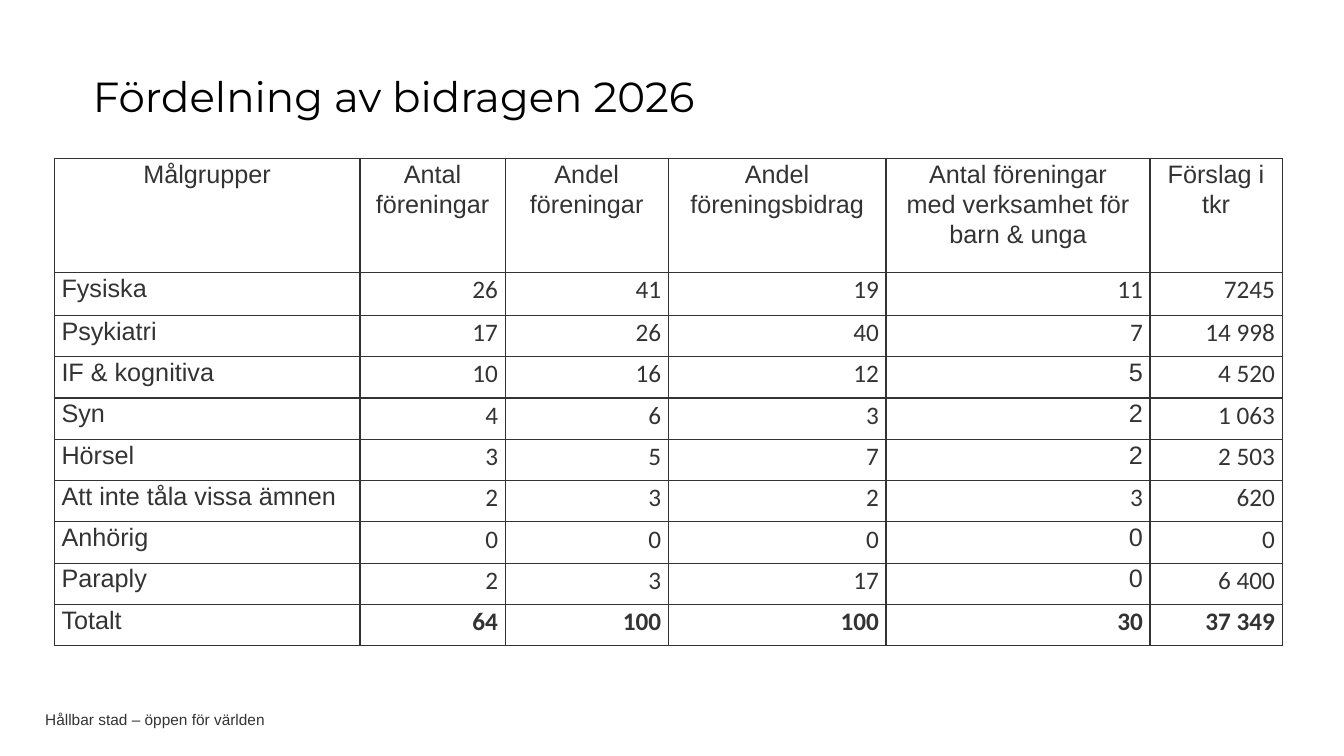
from dataclasses import dataclass

from lxml.etree import SubElement
from pptx import Presentation
from pptx.dml.color import RGBColor
from pptx.enum.text import MSO_ANCHOR as Anchor, PP_ALIGN as Align
from pptx.oxml.ns import qn
from pptx.slide import Slide
from pptx.table import _Cell as Cell
from pptx.text.text import _Paragraph as Paragraph
from pptx.util import Cm, Pt

COLORS = {"title": "000000", "text": "333333", "border": "333333"}
BODY_FONT, NUMBER_FONT, TITLE_FONT = "Arial", "Calibri", "Montserrat"


@dataclass
class Label:
    text: str
    left: float
    top: float
    width: float
    height: float
    size: int
    font: str
    color: str
    line_spacing: float = 1.0


@dataclass
class Group:
    name: str
    values: list[str]
    youth_font: str = NUMBER_FONT
    bold: bool = False


LABELS = [
    Label("Hållbar stad – öppen för världen", 1.14, 17.93, 24, 0.41, 11, BODY_FONT, "text"),
    Label("Fördelning av bidragen 2026", 2.34, 1.02, 29.21, 2.97, 30, TITLE_FONT, "title", 0.9),
]

HEADERS = [
    "Målgrupper",
    "Antal föreningar",
    "Andel\nföreningar",
    "Andel föreningsbidrag",
    "Antal föreningar\nmed verksamhet för\nbarn & unga",
    "Förslag i tkr",
]
YOUTH_COLUMN = 4

GROUPS = [
    Group("Fysiska", ["26", "41", "19", "11", "7245"]),
    Group("Psykiatri", ["17", "26", "40", "7", "14 998"]),
    Group("IF & kognitiva", ["10", "16", "12", "5", "4 520"], BODY_FONT),
    Group("Syn", ["4", "6", "3", "2", "1 063"], BODY_FONT),
    Group("Hörsel", ["3", "5", "7", "2", "2 503"], BODY_FONT),
    Group("Att inte tåla vissa ämnen", ["2", "3", "2", "3", "620"]),
    Group("Anhörig", ["0", "0", "0", "0", "0"], BODY_FONT),
    Group("Paraply", ["2", "3", "17", "0", "6 400"], BODY_FONT),
    Group("Totalt", ["64", "100", "100", "30", "37 349"], bold=True),
]

TABLE_LEFT, TABLE_TOP = 1.37, 3.99
COLUMN_WIDTHS = [7.7, 3.66, 4.11, 5.49, 6.65, 3.33]
ROW_HEIGHTS = [2.87, 1.09] + [1.04] * (len(GROUPS) - 1)


def format_runs(p: Paragraph, size: int, font: str, color: str, bold: bool = False) -> None:
    for r in p.runs:
        r.font.size = Pt(size)
        r.font.name = font
        r.font.bold = bold
        r.font.color.rgb = RGBColor.from_string(COLORS[color])


def add_label(s: Slide, label: Label) -> None:
    sp = s.shapes.add_textbox(Cm(label.left), Cm(label.top), Cm(label.width), Cm(label.height))
    tf = sp.text_frame
    tf.word_wrap = True
    tf.vertical_anchor = Anchor.MIDDLE
    tf.margin_left = tf.margin_right = tf.margin_top = tf.margin_bottom = 0
    p = tf.paragraphs[0]
    p.text = label.text
    p.line_spacing = label.line_spacing
    format_runs(p, label.size, label.font, label.color)


def add_borders(cell: Cell) -> None:
    props = cell._tc.get_or_add_tcPr()
    for side in ("a:lnL", "a:lnR", "a:lnT", "a:lnB"):
        line = SubElement(props, qn(side), w=str(Pt(1)))
        fill = SubElement(line, qn("a:solidFill"))
        SubElement(fill, qn("a:srgbClr"), val=COLORS["border"])


def fill_cell(cell: Cell, text: str, align: Align, font: str, bold: bool = False) -> None:
    add_borders(cell)
    cell.fill.background()
    cell.margin_left = cell.margin_right = Cm(0.18)
    cell.margin_top = cell.margin_bottom = 0
    p = cell.text_frame.paragraphs[0]
    p.text = text
    p.alignment = align
    p.line_spacing = 1.07
    p.space_after = Pt(8)
    format_runs(p, 18, font, "text", bold)


def add_grant_table(s: Slide) -> None:
    frame = s.shapes.add_table(
        len(ROW_HEIGHTS), len(COLUMN_WIDTHS), Cm(TABLE_LEFT), Cm(TABLE_TOP),
        Cm(sum(COLUMN_WIDTHS)), Cm(sum(ROW_HEIGHTS)),
    )
    table = frame.table
    table.first_row = table.horz_banding = False
    for column, width in zip(table.columns, COLUMN_WIDTHS):
        column.width = Cm(width)
    for row, height in zip(table.rows, ROW_HEIGHTS):
        row.height = Cm(height)

    # Header row
    for col, header in enumerate(HEADERS):
        fill_cell(table.cell(0, col), header, Align.CENTER, BODY_FONT)

    # One row per target group
    for row, group in enumerate(GROUPS, start=1):
        fill_cell(table.cell(row, 0), group.name, Align.LEFT, BODY_FONT)
        for col, value in enumerate(group.values, start=1):
            font = group.youth_font if col == YOUTH_COLUMN else NUMBER_FONT
            fill_cell(table.cell(row, col), value, Align.RIGHT, font, group.bold)


def main() -> None:
    prs = Presentation()
    prs.slide_width, prs.slide_height = Cm(33.87), Cm(19.05)
    s = prs.slides.add_slide(prs.slide_layouts[6])

    # Footer and title
    for label in LABELS:
        add_label(s, label)

    # Grants by target group
    add_grant_table(s)
    prs.save("out.pptx")


if __name__ == "__main__":
    main()
